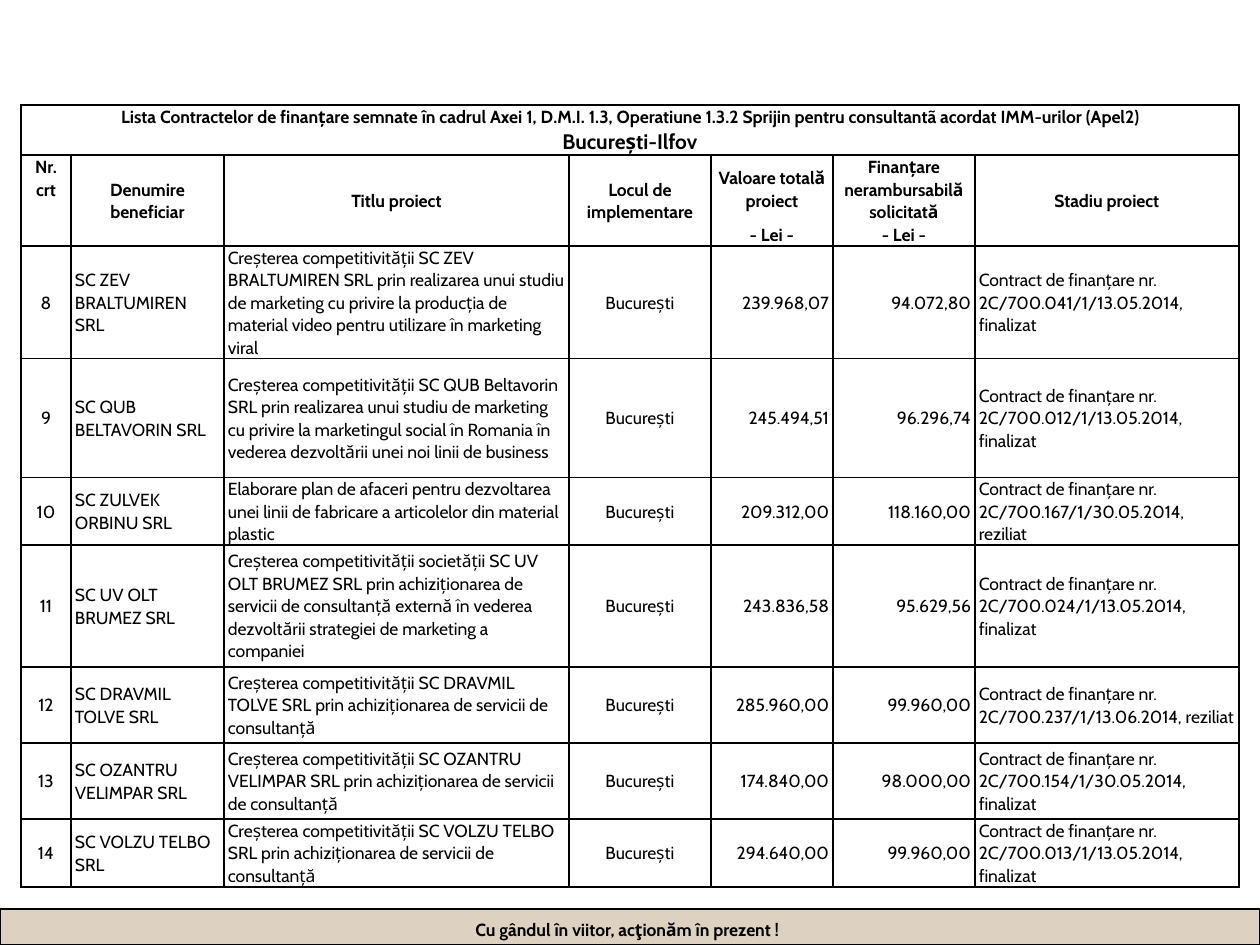
from lxml import etree
from pptx import Presentation, util as u
from pptx.dml.color import RGBColor
from pptx.enum import shapes, text
from pptx.oxml import ns

BLACK = RGBColor(0, 0, 0)
WHITE = RGBColor(255, 255, 255)
SAND = RGBColor(0xDD, 0xD1, 0xC1)
FONT = "Cabin"
PX = u.Inches(1) // 126

TITLE = [
    ("Lista Contractelor de finanțare semnate în cadrul Axei 1, D.M.I. 1.3, Operatiune 1.3.2 "
     "Sprijin pentru consultantã acordat IMM-urilor (Apel2)", 10),
    ("București-Ilfov", 12),
]
HEADINGS = [
    "Nr. crt", "Denumire beneficiar", "Titlu proiect", "Locul de implementare",
    "Valoare totală proiect", "Finanțare nerambursabilă solicitată", "Stadiu proiect",
]
UNIT = "- Lei -"
UNIT_COLUMNS = (4, 5)
PLACE = "București"
GROWTH = "Creșterea competitivității "
ADVICE = " prin achiziționarea de servicii de consultanță"
PROJECTS = [
    ("SC ZEV BRALTUMIREN SRL",
     GROWTH + "SC ZEV BRALTUMIREN SRL prin realizarea unui studiu de marketing cu privire la "
     "producția de material video pentru utilizare în marketing viral",
     "239.968,07", "94.072,80", "2C/700.041/1/13.05.2014, finalizat"),
    ("SC QUB BELTAVORIN SRL",
     GROWTH + "SC QUB Beltavorin SRL prin realizarea unui studiu de marketing cu privire la "
     "marketingul social în Romania în vederea dezvoltării unei noi linii de business",
     "245.494,51", "96.296,74", "2C/700.012/1/13.05.2014, finalizat"),
    ("SC ZULVEK ORBINU SRL",
     "Elaborare plan de afaceri pentru dezvoltarea unei linii de fabricare a articolelor "
     "din material plastic",
     "209.312,00", "118.160,00", "2C/700.167/1/30.05.2014, reziliat"),
    ("SC UV OLT BRUMEZ SRL",
     GROWTH + "societății SC UV OLT BRUMEZ SRL" + ADVICE
     + " externă în vederea dezvoltării strategiei de marketing a companiei",
     "243.836,58", "95.629,56", "2C/700.024/1/13.05.2014, finalizat"),
    ("SC DRAVMIL TOLVE SRL", GROWTH + "SC DRAVMIL TOLVE SRL" + ADVICE,
     "285.960,00", "99.960,00", "2C/700.237/1/13.06.2014, reziliat"),
    ("SC OZANTRU VELIMPAR SRL", GROWTH + "SC OZANTRU VELIMPAR SRL" + ADVICE,
     "174.840,00", "98.000,00", "2C/700.154/1/30.05.2014, finalizat"),
    ("SC VOLZU TELBO SRL", GROWTH + "SC VOLZU TELBO SRL" + ADVICE,
     "294.640,00", "99.960,00", "2C/700.013/1/13.05.2014, finalizat"),
]
FIRST_NUMBER = 8
SLOGAN = [("Cu gândul în viitor, acţionăm în prezent !", 10), (" ", 14)]

LEFT, TOP = 21, 105
COLUMNS = [50, 153, 345, 142, 122, 142, 264]
ROWS = [50, 68, 23, 112, 119, 67, 122, 76, 76, 68]
CENTER, RIGHT, START = text.PP_ALIGN.CENTER, text.PP_ALIGN.RIGHT, text.PP_ALIGN.LEFT
ALIGNMENTS = [CENTER, START, START, CENTER, RIGHT, RIGHT, START]
FILLED_COLUMNS = 4


def add_span(para, words, size, bold):
    span = para.add_run()
    span.text = words
    span.font.name = FONT
    span.font.size = u.Pt(size)
    span.font.bold = bold
    span.font.color.rgb = BLACK


def write_cell(cell, lines, alignment=CENTER, bold=True, spacing=1.07, middle=True):
    if middle:
        cell.vertical_anchor = text.MSO_ANCHOR.MIDDLE
    frame = cell.text_frame
    for index, (words, size) in enumerate(lines):
        para = frame.add_paragraph() if index else frame.paragraphs[0]
        para.alignment = alignment
        para.line_spacing = spacing
        add_span(para, words, size, bold)


def draw_borders(cell, hidden):
    properties = cell._tc.get_or_add_tcPr()
    for side in "LRTB":
        line = etree.SubElement(properties, ns.qn(f"a:ln{side}"), w=str(u.Pt(1)))
        if side == hidden:
            etree.SubElement(line, ns.qn("a:noFill"))
        else:
            fill = etree.SubElement(line, ns.qn("a:solidFill"))
            etree.SubElement(fill, ns.qn("a:srgbClr"), val=str(BLACK))


def style_cell(cell, row, column):
    cell.margin_left = cell.margin_right = 4 * PX
    cell.margin_top = cell.margin_bottom = 0
    hidden = {1: "B", 2: "T"}.get(row) if column in UNIT_COLUMNS else None
    draw_borders(cell, hidden)
    if row > 2 and column < FILLED_COLUMNS:
        cell.fill.solid()
        cell.fill.fore_color.rgb = WHITE
    else:
        cell.fill.background()


def add_contracts(page):
    table = page.shapes.add_table(
        len(ROWS), len(COLUMNS), LEFT * PX, TOP * PX, sum(COLUMNS) * PX, sum(ROWS) * PX).table
    table.first_row = table.horz_banding = False
    for column, width in zip(table.columns, COLUMNS):
        column.width = width * PX
    for row, height in zip(table.rows, ROWS):
        row.height = height * PX
    for row in range(len(ROWS)):
        for column in range(len(COLUMNS)):
            style_cell(table.cell(row, column), row, column)

    table.cell(0, 0).merge(table.cell(0, len(COLUMNS) - 1))
    write_cell(table.cell(0, 0), TITLE, middle=False)
    for column, heading in enumerate(HEADINGS):
        write_cell(table.cell(1, column), [(heading, 10)], middle=column > 0)
        if column in UNIT_COLUMNS:
            write_cell(table.cell(2, column), [(UNIT, 10)])
        else:
            table.cell(1, column).merge(table.cell(2, column))

    for index, (company, project, total, grant, contract) in enumerate(PROJECTS):
        values = [str(FIRST_NUMBER + index), company, project, PLACE, total, grant,
                  "Contract de finanțare nr. " + contract]
        for column, (value, alignment) in enumerate(zip(values, ALIGNMENTS)):
            write_cell(table.cell(3 + index, column), [(value, 10)], alignment, False, 1.06)


def add_slogan(page):
    bar = page.shapes.add_shape(
        shapes.MSO_SHAPE.RECTANGLE, 0, 909 * PX, 1260 * PX, 36 * PX)
    bar.shadow.inherit = False
    bar.fill.solid()
    bar.fill.fore_color.rgb = SAND
    bar.line.color.rgb = BLACK
    bar.line.width = u.Pt(0.75)
    frame = bar.text_frame
    frame.word_wrap = False
    frame.vertical_anchor = text.MSO_ANCHOR.MIDDLE
    para = frame.paragraphs[0]
    para.alignment = CENTER
    for words, size in SLOGAN:
        add_span(para, words, size, True)


def main():
    deck = Presentation()
    deck.slide_width, deck.slide_height = 1260 * PX, 945 * PX
    page = deck.slides.add_slide(deck.slide_layouts[6])
    add_slogan(page)
    add_contracts(page)
    deck.save("out.pptx")


if __name__ == "__main__":
    main()
